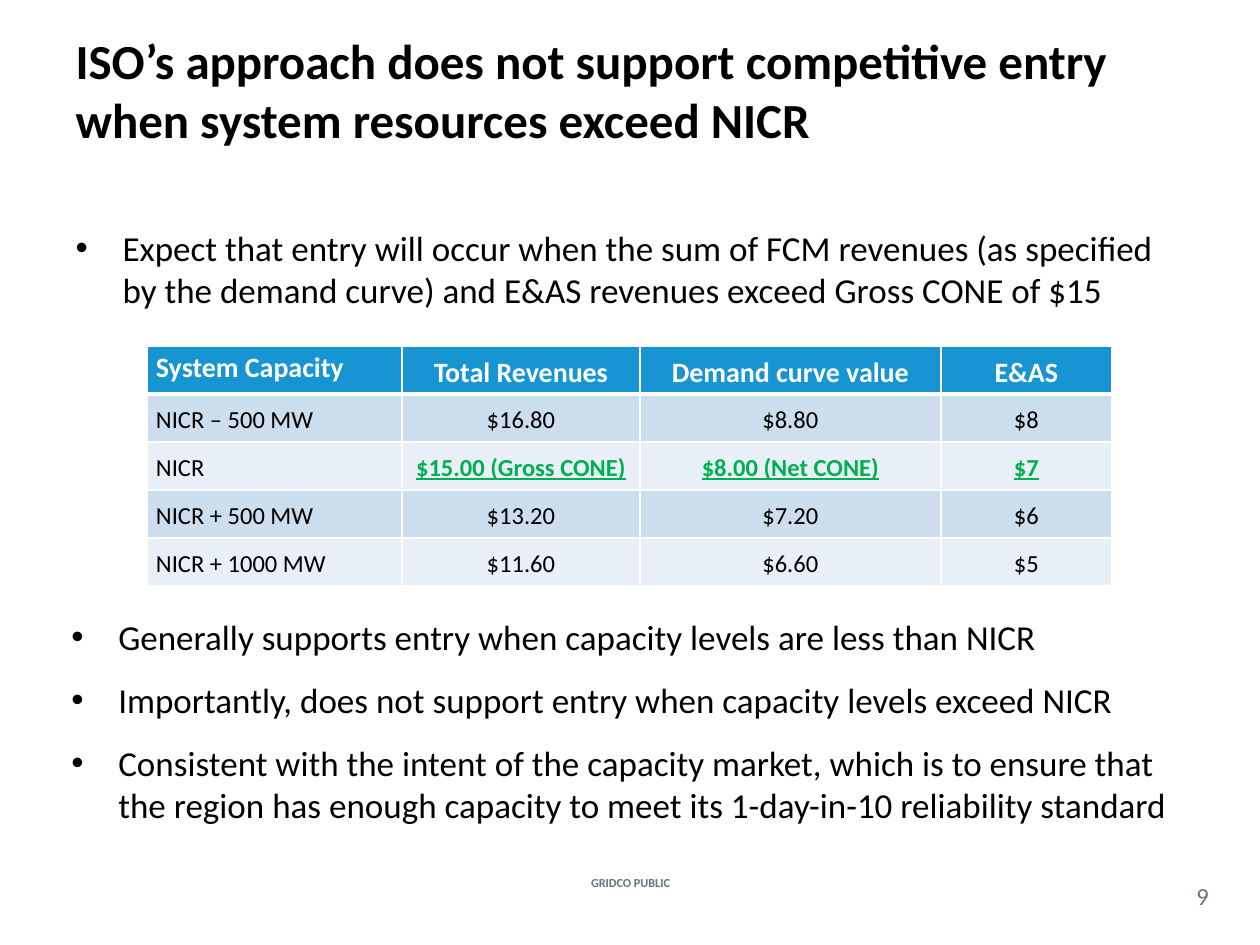
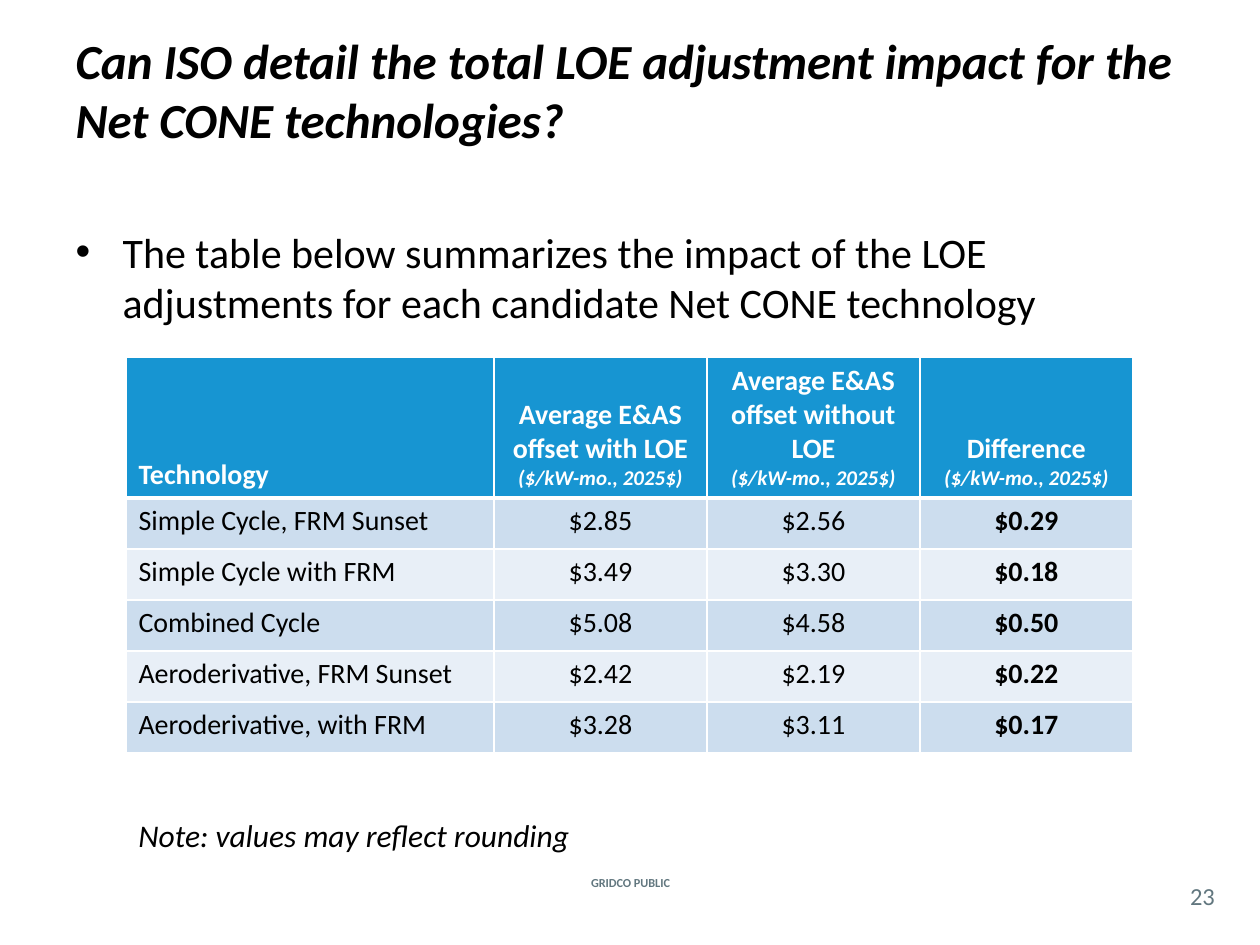
from lxml.etree import SubElement
from pptx import Presentation
from pptx.dml.color import RGBColor
from pptx.enum.text import MSO_ANCHOR as ANCHOR, MSO_AUTO_SIZE as AUTO, PP_ALIGN as ALIGN
from pptx.oxml import parse_xml
from pptx.oxml.ns import nsdecls, qn
from pptx.util import Emu, Pt

PX_PER_INCH = 126
FONT = "Calibri"
COLORS = {
    "text": "000000",
    "white": "FFFFFF",
    "header": "1795D2",
    "band_dark": "CCDDEE",
    "band_light": "E8EFF7",
    "accent": "00B050",
    "footer": "62777F",
}
FOOTER = "GRIDCO PUBLIC"
TITLE_BOX = (63, 10, 1134, 158)
FOOTER_BOX = (538, 872, 185, 21)
NUMBER_BOX = (1176, 877, 53, 37)
INDENT = 47

ENTRY_ROWS = [
    ["System\u00a0Capacity", "Total Revenues", "Demand curve value", "E&AS"],
    ["NICR – 500 MW", "$16.80", "$8.80", "$8"],
    ["NICR", "$15.00 (Gross CONE)", "$8.00 (Net CONE)", "$7"],
    ["NICR + 500 MW", "$13.20", "$7.20", "$6"],
    ["NICR + 1000 MW", "$11.60", "$6.60", "$5"],
]
UNIT = "($/kW-mo., 2025$)"
LOE_ROWS = [
    ["Technology", f"Average E&AS offset with LOE\n{UNIT}",
     f"Average E&AS offset without LOE\n{UNIT}", f"Difference\n{UNIT}"],
    ["Simple Cycle, FRM Sunset", "$2.85", "$2.56", "$0.29"],
    ["Simple Cycle with FRM", "$3.49", "$3.30", "$0.18"],
    ["Combined Cycle", "$5.08", "$4.58", "$0.50"],
    ["Aeroderivative, FRM Sunset", "$2.42", "$2.19", "$0.22"],
    ["Aeroderivative, with FRM", "$3.28", "$3.11", "$0.17"],
]


def px(n):
    """Turn whole pixels into EMU."""
    return Emu(round(n * 914400 / PX_PER_INCH))


def rgb(name):
    """Look up a named colour."""
    return RGBColor.from_string(COLORS[name])


def write(p, text, size=20, color="text", bold=False, italic=False,
          underline=False, align=ALIGN.LEFT, spacing=None):
    """Put one formatted run into a paragraph."""
    p.alignment = align
    if spacing:
        p.line_spacing = spacing
    r = p.add_run()
    r.text = text
    f = r.font
    f.name, f.size, f.bold, f.italic, f.underline = FONT, Pt(size), bold, italic, underline
    f.color.rgb = rgb(color)


def place(sp, box, anchor=ANCHOR.TOP):
    """Move a text shape into its box and return its text frame."""
    sp.left, sp.top, sp.width, sp.height = map(px, box)
    tf = sp.text_frame
    tf.word_wrap = True
    tf.auto_size = AUTO.NONE
    tf.vertical_anchor = anchor
    return tf


def add_text(s, box, text, anchor=ANCHOR.TOP, **fmt):
    """Add a one-paragraph text box and return its text frame."""
    tf = place(s.shapes.add_textbox(0, 0, 0, 0), box, anchor)
    write(tf.paragraphs[0], text, **fmt)
    return tf


def add_bullets(sp, box, items, size):
    """Fill a text shape with a bulleted list."""
    tf = place(sp, box)
    for i, item in enumerate(items):
        p = tf.add_paragraph() if i else tf.paragraphs[0]
        p.space_before = Pt(12 if i else 0)
        pPr = p._p.get_or_add_pPr()
        pPr.set("marL", str(px(INDENT)))
        pPr.set("indent", str(-px(INDENT)))
        SubElement(pPr, qn("a:buFont"), typeface="Arial")
        SubElement(pPr, qn("a:buChar"), char="•")
        write(p, item, size=size)


def add_borders(cell, bottom):
    """Draw white lines round a cell, with a given bottom width in points."""
    tcPr = cell._tc.get_or_add_tcPr()
    for i, (side, width) in enumerate(zip("LRTB", (1, 1, 1, bottom))):
        tcPr.insert(i, parse_xml(
            f'<a:ln{side} {nsdecls("a")} w="{Pt(width)}"><a:solidFill>'
            f'<a:srgbClr val="{COLORS["white"]}"/></a:solidFill></a:ln{side}>'))


def add_grid(s, left, top, widths, heights, rows, style):
    """Add a banded table; style(row, col) gives (anchor, text format)."""
    frame = s.shapes.add_table(len(rows), len(widths), px(left), px(top),
                               px(sum(widths)), px(sum(heights)))
    table = frame.table
    table.horz_banding = False
    for col, width in zip(table.columns, widths):
        col.width = px(width)
    for i, (row, height) in enumerate(zip(rows, heights)):
        table.rows[i].height = px(height)
        band = "band_dark" if i % 2 else "band_light"
        for j, text in enumerate(row):
            cell = table.cell(i, j)
            cell.fill.solid()
            cell.fill.fore_color.rgb = rgb(band if i else "header")
            add_borders(cell, 1 if i else 3)
            cell.vertical_anchor, fmt = style(i, j)
            fmt["align"] = ALIGN.CENTER if j else ALIGN.LEFT
            if not i:
                fmt.update(color="white", bold=True)
            label, *units = text.split("\n")
            write(cell.text_frame.paragraphs[0], label, **fmt)
            for unit in units:
                write(cell.text_frame.add_paragraph(), unit,
                      **{**fmt, "size": 12, "italic": True})
    return table


def entry_style(i, j):
    """Format the entry table, stressing the values at NICR."""
    fmt = {"size": 14 if i else 16, "spacing": 1.15}
    if i == 2 and j:
        fmt.update(color="accent", bold=True, underline=True)
    return (ANCHOR.MIDDLE if i or j else ANCHOR.TOP), fmt


def loe_style(i, j):
    """Format the LOE table, stressing the difference column."""
    return (ANCHOR.TOP if i else ANCHOR.BOTTOM), {"size": 16, "bold": j == 3}


def add_base(prs, title, number, italic=False):
    """Add a slide with its title, footer and page number."""
    s = prs.slides.add_slide(prs.slide_layouts[1])
    tf = place(s.shapes.title, TITLE_BOX, ANCHOR.MIDDLE)
    write(tf.paragraphs[0], title, size=28, bold=True, italic=italic)
    add_text(s, FOOTER_BOX, FOOTER, ANCHOR.MIDDLE, size=7, color="footer",
             bold=True, align=ALIGN.CENTER)
    tf = add_text(s, NUMBER_BOX, str(number), ANCHOR.MIDDLE, size=14,
                  color="footer", align=ALIGN.CENTER)
    tf.margin_left = tf.margin_right = tf.margin_top = tf.margin_bottom = 0
    return s


def add_entry_slide(prs):
    """Build the slide on competitive entry."""
    s = add_base(prs, "ISO’s approach does not support competitive entry "
                 "when system resources exceed NICR", 9)
    add_bullets(s.placeholders[1], (63, 220, 1134, 158), [
        "Expect that entry will occur when the sum of FCM revenues (as specified "
        "by the demand curve) and E&AS revenues exceed Gross CONE of $15"], 20)
    add_bullets(s.shapes.add_textbox(0, 0, 0, 0), (59, 609, 1134, 268), [
        "Generally supports entry when capacity levels are less than NICR",
        "Importantly, does not support entry when capacity levels exceed NICR",
        "Consistent with the intent of the capacity market, which is to ensure that "
        "the region has enough capacity to meet its 1-day-in-10 reliability standard"], 20)
    table = add_grid(s, 147, 346, [255, 238, 301, 171], [48] * 5,
                     ENTRY_ROWS, entry_style)
    for cell in table.iter_cells():
        cell.margin_left = cell.margin_right = px(9)
        cell.margin_top = cell.margin_bottom = 0


def add_loe_slide(prs):
    """Build the slide on the LOE adjustment."""
    s = add_base(prs, "Can ISO detail the total LOE adjustment impact for the "
                 "Net CONE technologies?", 23, italic=True)
    add_bullets(s.placeholders[1], (63, 220, 1134, 640), [
        "The table below summarizes the impact of the LOE adjustments for each "
        "candidate Net CONE technology"], 24)
    add_grid(s, 126, 357, [368] + [213] * 3, [139] + [51] * 5, LOE_ROWS, loe_style)
    add_text(s, (126, 810, 1071, 50), "Note: values may reflect rounding",
             size=18, italic=True)


def main():
    """Build and save the slides."""
    prs = Presentation()
    prs.slide_width, prs.slide_height = px(1260), px(945)
    add_entry_slide(prs)
    add_loe_slide(prs)
    prs.save("out.pptx")


if __name__ == "__main__":
    main()
